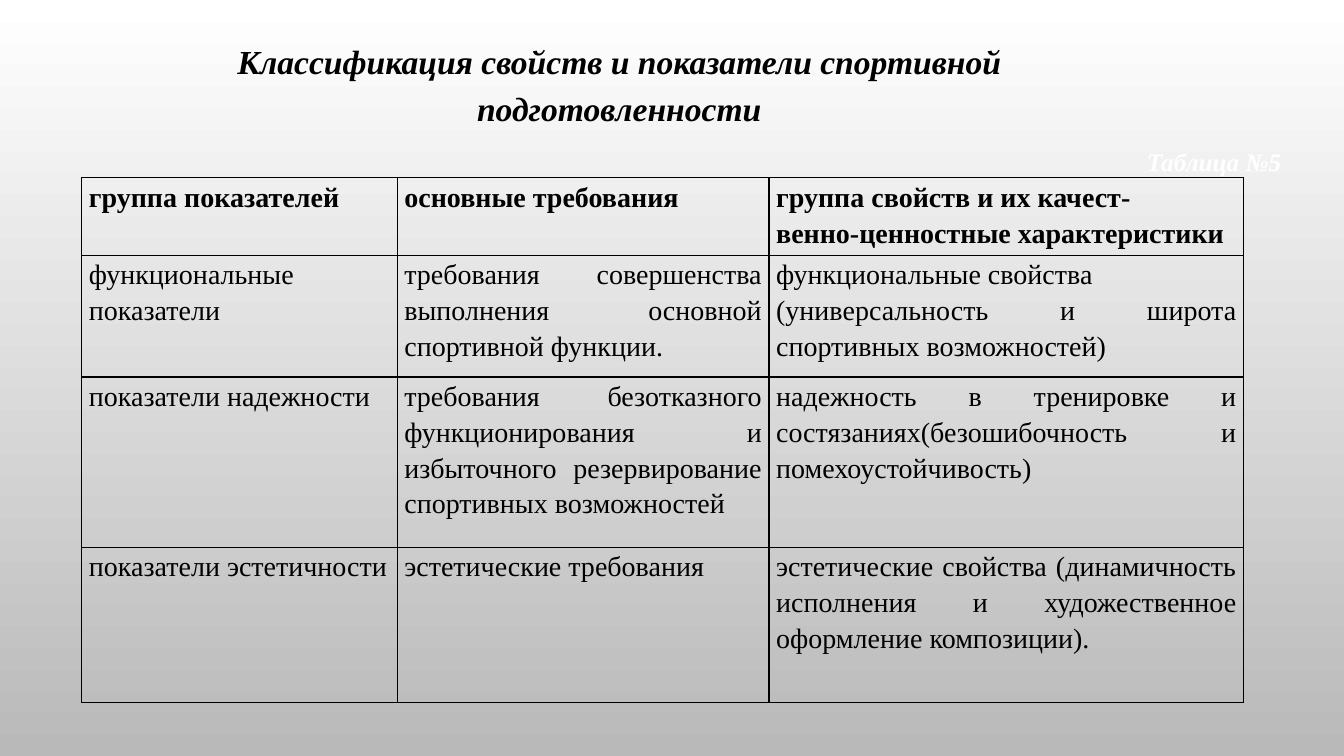
from lxml.etree import SubElement
from pptx import Presentation
from pptx.dml.color import RGBColor as Rgb
from pptx.enum.text import MSO_ANCHOR as Anchor, MSO_AUTO_SIZE as Fit, PP_ALIGN as Align
from pptx.oxml.ns import qn
from pptx.util import Cm, Pt

TITLE = "Классификация свойств и показатели спортивной подготовленности"
LABEL = "Таблица №5"
ROWS = [
    ("группа показателей", "основные требования",
     "группа свойств и их качест-\nвенно-ценностные характеристики"),
    ("функциональные\nпоказатели",
     "требования совершенства выполнения основной спортивной функции.",
     "функциональные свойства\n(универсальность и широта спортивных возможностей)"),
    ("показатели надежности",
     "требования безотказного функционирования и избыточного резервирование "
     "спортивных возможностей",
     "надежность в тренировке и состязаниях(безошибочность и помехоустойчивость)"),
    ("показатели эстетичности", "эстетические требования",
     "эстетические свойства (динамичность исполнения и художественное "
     "оформление композиции)."),
]
WIDTHS = [7.95, 9.37, 11.96]
HEIGHTS = [1.93, 3.07, 4.29, 3.91]
COLORS = {"ink": "000000", "top": "FFFFFF", "base": "B9B9B9", "label": "FFFFFF"}
FONT = "Times New Roman"


def style(frame, size, align, color="ink", bold=True, italic=False, space=1.15):
    frame.word_wrap = True
    for para in frame.paragraphs:
        para.alignment = align
        para.line_spacing = space
        for run in para.runs:
            font = run.font
            font.name, font.size = FONT, Pt(size)
            font.bold, font.italic = bold, italic
            font.color.rgb = Rgb.from_string(COLORS[color])


def border(cell):
    props = cell._tc.get_or_add_tcPr()
    for spot, side in enumerate(("lnL", "lnR", "lnT", "lnB")):
        line = props.makeelement(qn(f"a:{side}"), {"w": str(Pt(1))})
        fill = SubElement(line, qn("a:solidFill"))
        SubElement(fill, qn("a:srgbClr"), val=COLORS["ink"])
        props.insert(spot, line)


def paint(slide):
    """Fill the background from top to bottom."""
    fill = slide.background.fill
    fill.gradient()
    fill.gradient_angle = 270
    for stop, name, place in zip(fill.gradient_stops, ("top", "base"), (0, 1)):
        stop.color.rgb = Rgb.from_string(COLORS[name])
        stop.position = place


def add_grid(slide):
    shape = slide.shapes.add_table(len(ROWS), len(WIDTHS), Cm(2.06), Cm(4.48),
                                   Cm(sum(WIDTHS)), Cm(sum(HEIGHTS)))
    table = shape.table
    table.first_row = table.horz_banding = False
    for col, width in zip(table.columns, WIDTHS):
        col.width = Cm(width)
    for i, (row, height) in enumerate(zip(table.rows, HEIGHTS)):
        row.height = Cm(height)
        for cell, text in zip(row.cells, ROWS[i]):
            cell.text_frame.text = text
            cell.margin_left = cell.margin_right = Cm(0.18)
            cell.margin_top = cell.margin_bottom = 0
            cell.fill.background()
            border(cell)
            style(cell.text_frame, 20, Align.JUSTIFY, bold=i == 0)


def main():
    deck = Presentation()
    deck.slide_width, deck.slide_height = Cm(33.87), Cm(19.05)
    slide = deck.slides.add_slide(deck.slide_layouts[5])
    paint(slide)

    title = slide.shapes.title
    title.left, title.top, title.width, title.height = Cm(4.19), Cm(0.76), Cm(22.83), Cm(2.62)
    frame = title.text_frame
    frame.text = TITLE
    frame.auto_size, frame.vertical_anchor = Fit.NONE, Anchor.TOP
    style(frame, 24, Align.CENTER, italic=True)

    label = slide.shapes.add_textbox(Cm(27.5), Cm(3.55), Cm(5.04), Cm(1.02))
    label.text_frame.text = LABEL
    style(label.text_frame, 18, Align.RIGHT, "label", italic=True, space=1)

    add_grid(slide)
    deck.save("out.pptx")


if __name__ == "__main__":
    main()
